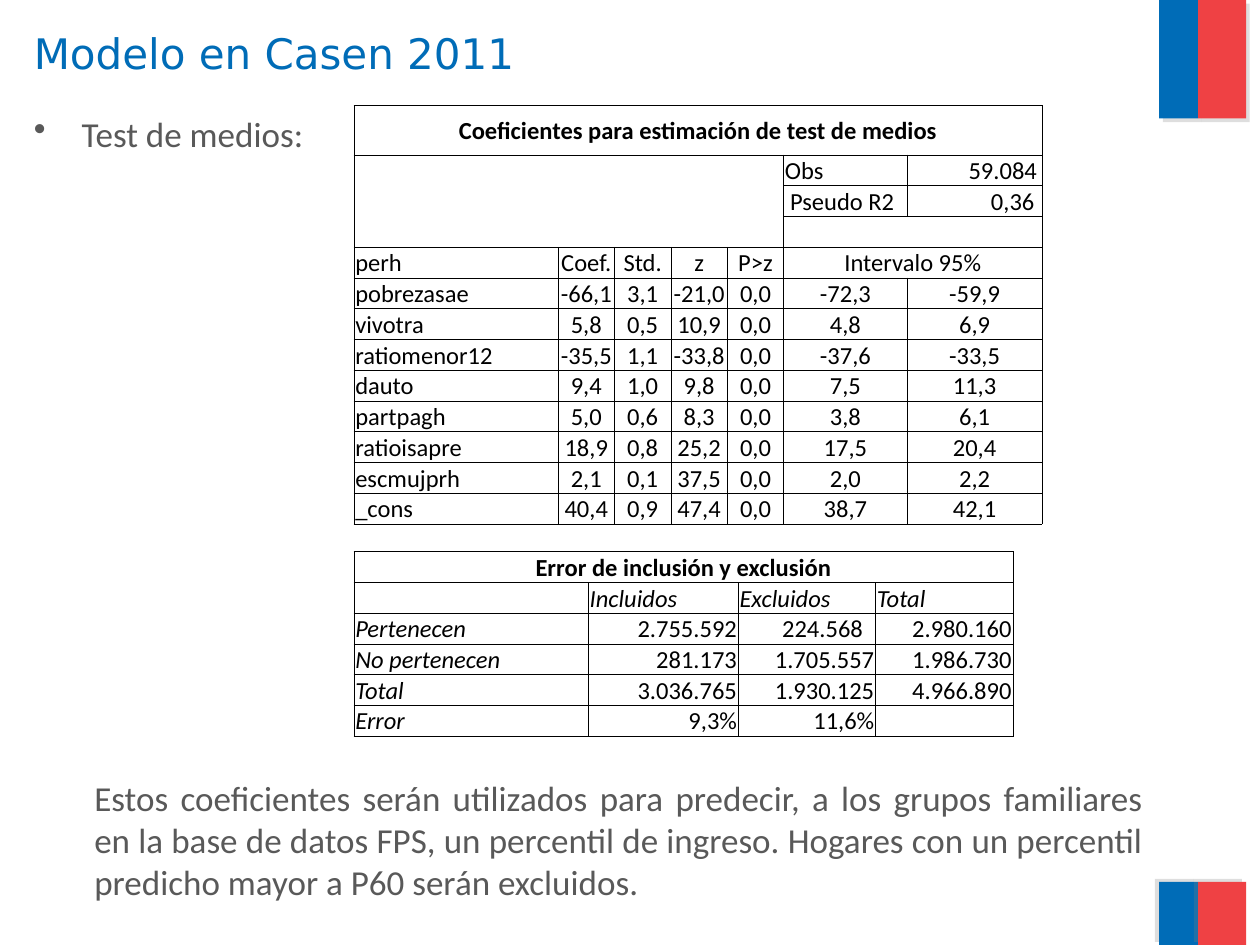
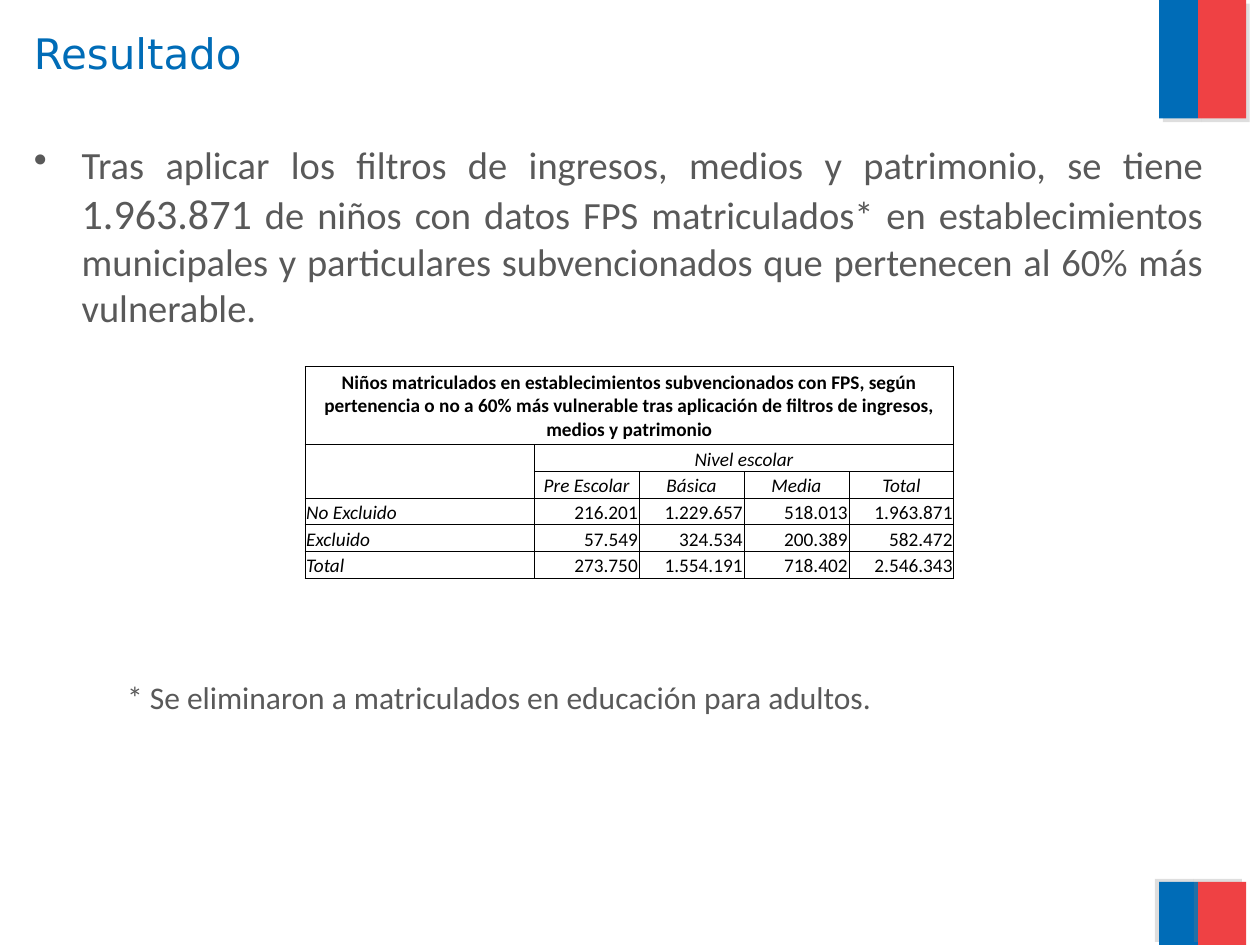
from lxml.etree import SubElement
from pptx import Presentation
from pptx.dml.color import RGBColor
from pptx.enum.shapes import MSO_SHAPE
from pptx.enum.text import MSO_ANCHOR, PP_ALIGN
from pptx.oxml import parse_xml
from pptx.oxml.ns import nsdecls, qn
from pptx.util import Emu, Inches, Pt

COLORS = {"blue": "006CB7", "red": "EF4144", "body": "595959",
          "table": "000000", "shadow": "808080"}
TITLE_FONT, BODY_FONT = "DejaVu Sans", "Calibri"
SLIDE_WIDTH, SLIDE_HEIGHT = Inches(10), Inches(7.5)
COLUMNS = 100
UNIT = SLIDE_WIDTH / COLUMNS  # square grid: 100 columns by 75 rows
LEFT, CENTER, RIGHT, JUSTIFY = (PP_ALIGN.LEFT, PP_ALIGN.CENTER,
                                PP_ALIGN.RIGHT, PP_ALIGN.JUSTIFY)

COEFFICIENTS = [
    ["Coeficientes para estimación de test de medios"],
    ["", "", "", "", "", "Obs", "59.084"],
    ["", "", "", "", "", "Pseudo R2", "0,36"],
    [],
    ["perh", "Coef.", "Std.", "z", "P>z", "Intervalo 95%"],
    ["pobrezasae", "-66,1", "3,1", "-21,0", "0,0", "-72,3", "-59,9"],
    ["vivotra", "5,8", "0,5", "10,9", "0,0", "4,8", "6,9"],
    ["ratiomenor12", "-35,5", "1,1", "-33,8", "0,0", "-37,6", "-33,5"],
    ["dauto", "9,4", "1,0", "9,8", "0,0", "7,5", "11,3"],
    ["partpagh", "5,0", "0,6", "8,3", "0,0", "3,8", "6,1"],
    ["ratioisapre", "18,9", "0,8", "25,2", "0,0", "17,5", "20,4"],
    ["escmujprh", "2,1", "0,1", "37,5", "0,0", "2,0", "2,2"],
    ["_cons", "40,4", "0,9", "47,4", "0,0", "38,7", "42,1"],
]
TARGETING_ERRORS = [
    ["Error de inclusión y exclusión"],
    ["", "Incluidos", "Excluidos", "Total"],
    ["Pertenecen", "2.755.592", "224.568", "2.980.160"],
    ["No pertenecen", "281.173", "1.705.557", "1.986.730"],
    ["Total", "3.036.765", "1.930.125", "4.966.890"],
    ["Error", "9,3%", "11,6%"],
]
ENROLLED_CHILDREN = [
    ["Niños matriculados en establecimientos subvencionados con FPS, según "
     "pertenencia o no a 60% más vulnerable tras aplicación de filtros de "
     "ingresos, medios y patrimonio"],
    ["", "Nivel escolar"],
    ["", "Pre Escolar", "Básica", "Media", "Total"],
    ["No Excluido", "216.201", "1.229.657", "518.013", "1.963.871"],
    ["Excluido", "57.549", "324.534", "200.389", "582.472"],
    ["Total", "273.750", "1.554.191", "718.402", "2.546.343"],
]


def grid(*cells):
    """Turn grid columns or rows into slide lengths."""
    return [Emu(round(cell * UNIT)) for cell in cells]


def style_font(font, size, color, name=BODY_FONT, bold=False, italic=False):
    font.name, font.size = name, Pt(size)
    font.bold, font.italic = bold, italic
    font.color.rgb = RGBColor.from_string(COLORS[color])


def add_band(slide, left, top, width, height, color, shadow_angle):
    """Add a flag stripe with a hard offset shadow."""
    band = slide.shapes.add_shape(MSO_SHAPE.RECTANGLE,
                                  *grid(left, top, width, height))
    band.fill.solid()
    band.fill.fore_color.rgb = RGBColor.from_string(COLORS[color])
    band.line.fill.background()
    band.shadow.inherit = False
    effects = band._element.spPr.find(qn("a:effectLst"))
    effects.append(parse_xml(
        f'<a:outerShdw {nsdecls("a")} blurRad="0" dist="{Pt(3)}" '
        f'dir="{shadow_angle * 60000}" algn="ctr" rotWithShape="0">'
        f'<a:srgbClr val="{COLORS["shadow"]}"><a:alpha val="25000"/>'
        '</a:srgbClr></a:outerShdw>'))


def add_text(slide, left, top, width, height, runs, size, color="body",
             font=BODY_FONT, align=LEFT, bullet=False):
    """Add one paragraph; runs is a text or a list of (text, size)."""
    box = slide.shapes.add_textbox(*grid(left, top, width, height))
    box.text_frame.word_wrap = True
    paragraph = box.text_frame.paragraphs[0]
    paragraph.alignment = align
    style_font(paragraph.font, size, color, font)
    if isinstance(runs, str):
        runs = [(runs, size)]
    for text, run_size in runs:
        run = paragraph.add_run()
        run.text = text
        if run_size != size:
            run.font.size = Pt(run_size)
    if bullet:
        properties = paragraph._p.get_or_add_pPr()
        properties.set("marL", str(Inches(0.38)))
        properties.set("indent", str(-Inches(0.38)))
        mark = parse_xml(f'<a:buChar {nsdecls("a")} char="•"/>')
        properties.find(qn("a:defRPr")).addprevious(mark)


def add_framed_slide(presentation, title):
    """Add a slide with the flag bands and the title."""
    slide = presentation.slides.add_slide(presentation.slide_layouts[6])
    for top, height, angle in ((0, 9.4, 45), (70, 5, 215)):
        add_band(slide, 92, top, 3.1, height, "blue", angle)
        add_band(slide, 95.1, top, 3.8, height, "red", angle)
    add_text(slide, 1.7, 1.7, 89.3, 12.5, title, 24, "blue", TITLE_FONT)
    return slide


def draw_borders(cell):
    properties = cell._tc.get_or_add_tcPr()
    for position, side in enumerate(("lnL", "lnR", "lnT", "lnB")):
        line = parse_xml(f'<a:{side} {nsdecls("a")} w="{Pt(0.5)}"/>')
        fill = SubElement(line, qn("a:solidFill"))
        SubElement(fill, qn("a:srgbClr"), val=COLORS["table"])
        properties.insert(position, line)


def add_data_table(slide, left, top, widths, height, title_height, rows, size,
                   merges, align, italic_cell=None):
    """Add a ruled table; align(row, column) gives a cell's alignment."""
    frame = slide.shapes.add_table(
        len(rows), len(widths), *grid(left, top, sum(widths), height))
    table = frame.table
    table.first_row = table.horz_banding = False
    for column, width in zip(table.columns, grid(*widths)):
        column.width = width
    row_height = (height - title_height) / (len(rows) - 1)
    for number, row in enumerate(table.rows):
        row.height = grid(row_height if number else title_height)[0]
    for number, texts in enumerate(rows):
        for column in range(len(widths)):
            cell = table.cell(number, column)
            cell.fill.background()
            draw_borders(cell)
            cell.margin_left = cell.margin_right = cell.margin_top = Inches(0.01)
            cell.margin_bottom = 0
            cell.vertical_anchor = MSO_ANCHOR.BOTTOM if number else MSO_ANCHOR.MIDDLE
            paragraph = cell.text_frame.paragraphs[0]
            text = texts[column] if column < len(texts) else ""
            if text:
                paragraph.add_run().text = text
            else:  # keeps an empty cell as low as its row
                SubElement(paragraph._p, qn("a:endParaRPr"), sz=str(size * 100))
            paragraph.alignment = align(number, column) if number else CENTER
            italic = bool(number and italic_cell and italic_cell(number, column))
            style_font(paragraph.font, size, "table", bold=number == 0, italic=italic)
    for first_row, first_column, last_row, last_column in merges:
        table.cell(first_row, first_column).merge(table.cell(last_row, last_column))
    return table


def align_coefficient(row, column):
    if row < 4:
        return RIGHT if column == 6 else LEFT
    return CENTER if column else LEFT


def build_model_slide(presentation):
    slide = add_framed_slide(presentation, "Modelo en Casen 2011")
    add_text(slide, 1.7, 8.4, 89.4, 49.5, "Test de medios:", 20, bullet=True)
    add_text(slide, 6.5, 61.1, 85.2, 11.1,
             "Estos coeficientes serán utilizados para predecir, a los grupos "
             "familiares en la base de datos FPS, un percentil de ingreso. Hogares "
             "con un percentil predicho mayor a P60 serán excluidos.",
             20, align=JUSTIFY)
    coefficients = add_data_table(
        slide, 28.1, 8.4, [16.2] + [4.48] * 4 + [9.8, 10.7], 33.2, 3.9,
        COEFFICIENTS, 14,
        [(0, 0, 0, 6), (1, 0, 3, 4), (3, 5, 3, 6), (4, 5, 4, 6)],
        align_coefficient)
    coefficients.cell(1, 6).margin_right = Inches(0.04)
    coefficients.cell(2, 5).margin_left = Inches(0.05)
    coefficients.cell(2, 6).margin_right = Inches(0.06)
    errors = add_data_table(
        slide, 28.1, 43.8, [18.6, 11.9, 10.9, 10.9], 14.6, 14.6 / 6,
        TARGETING_ERRORS, 14, [(0, 0, 0, 3)],
        lambda row, column: RIGHT if row > 1 and column else LEFT,
        lambda row, column: row == 1 or column == 0)
    errors.cell(2, 2).margin_right = Inches(0.1)


def build_result_slide(presentation):
    slide = add_framed_slide(presentation, "Resultado")
    add_text(slide, 1.7, 10.7, 94.8, 14.2, [
        ("Tras aplicar los filtros de ingresos, medios y patrimonio, se tiene ", 22),
        ("1.963.871", 24),
        (" de niños con datos FPS matriculados* en establecimientos municipales "
         "y particulares subvencionados que pertenecen al 60% más vulnerable.", 22),
    ], 22, align=JUSTIFY, bullet=True)
    add_text(slide, 9.1, 53.3, 89.8, 4,
             "* Se eliminaron a matriculados en educación para adultos.",
             18, align=JUSTIFY)
    add_data_table(
        slide, 24.2, 29.1, [18.2] + [8.33] * 4, 16.8, 6.2, ENROLLED_CHILDREN, 11,
        [(0, 0, 0, 4), (1, 0, 2, 0), (1, 1, 1, 4)],
        lambda row, column: LEFT if column == 0 else CENTER if row < 3 else RIGHT,
        lambda row, column: row < 3 or column == 0)


def main():
    presentation = Presentation()
    presentation.slide_width, presentation.slide_height = SLIDE_WIDTH, SLIDE_HEIGHT
    build_model_slide(presentation)
    build_result_slide(presentation)
    presentation.save("out.pptx")


if __name__ == "__main__":
    main()
